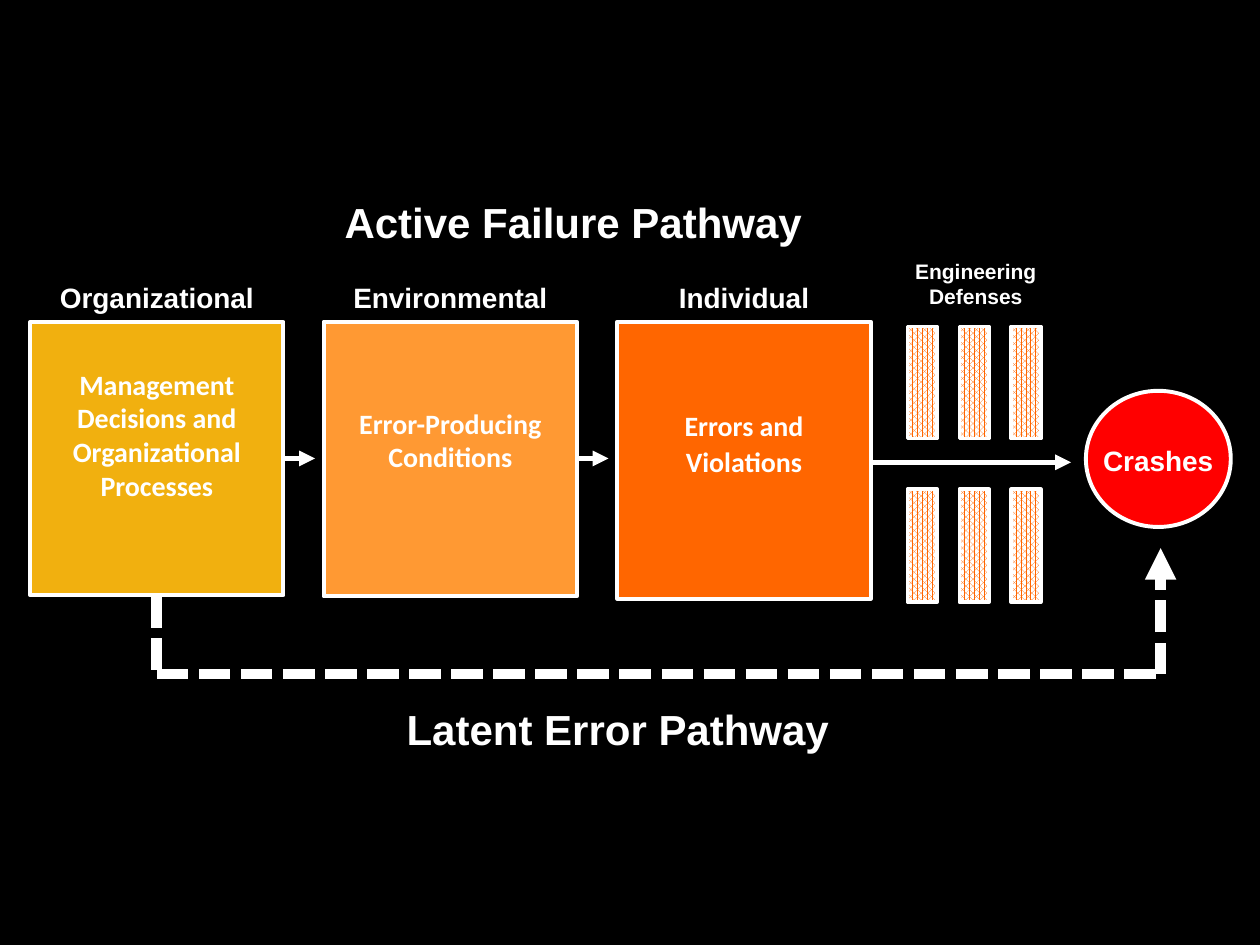
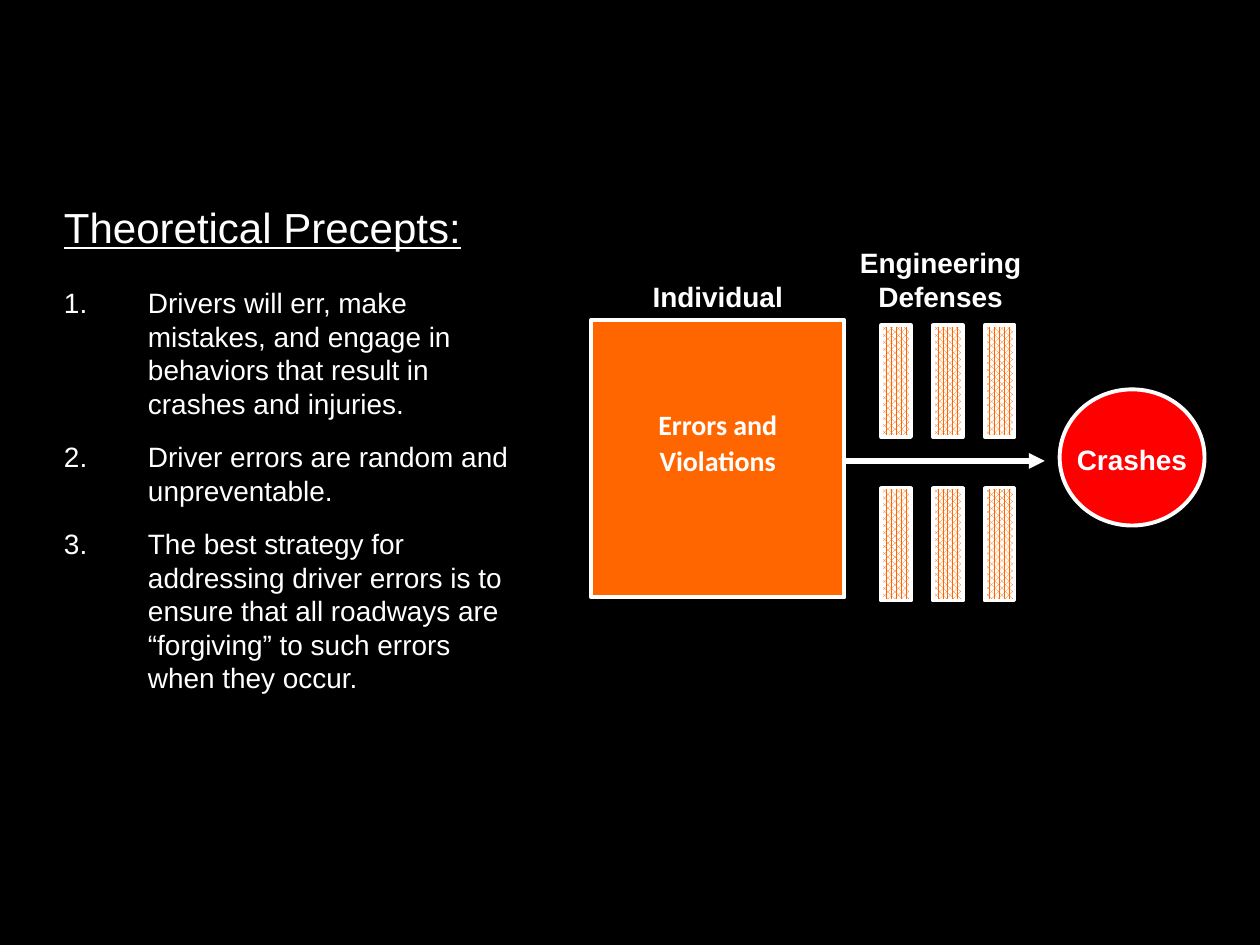
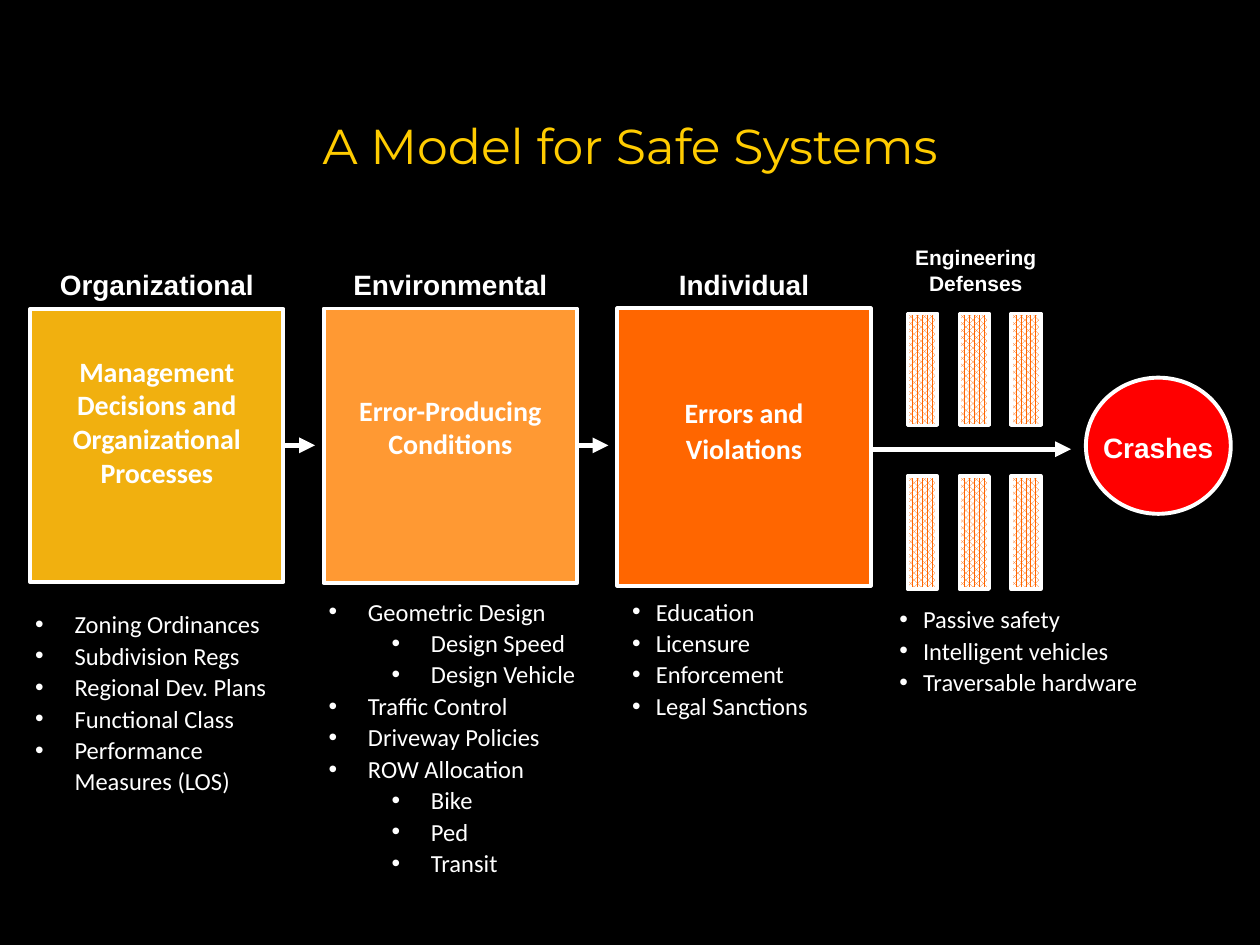
from lxml import etree
from pptx import Presentation
from pptx.dml.color import RGBColor
from pptx.enum.dml import MSO_LINE, MSO_PATTERN
from pptx.enum.shapes import MSO_CONNECTOR, MSO_SHAPE
from pptx.enum.text import MSO_ANCHOR, PP_ALIGN
from pptx.oxml.ns import qn
from pptx.util import Pt

RECT, OVAL = MSO_SHAPE.RECTANGLE, MSO_SHAPE.OVAL
LEFT, CENTER = PP_ALIGN.LEFT, PP_ALIGN.CENTER
TOP, MIDDLE = MSO_ANCHOR.TOP, MSO_ANCHOR.MIDDLE
STRAIGHT = MSO_CONNECTOR.STRAIGHT
DASH = MSO_LINE.SQUARE_DOT
WEAVE = MSO_PATTERN.PERCENT_75

COLORS = {
    "back": "000000", "white": "FFFFFF", "title": "FFCC00", "gold": "F1B00F",
    "amber": "FF9933", "orange": "FF6600", "red": "FF0000",
}
BOX_W = 144.7
# Label, text, colour, left, top, height, top inset, line spacing
STAGES = [
    ("Organizational", "Management Decisions and Organizational Processes",
     "gold", 17.3, 184, 156.2, 26, 1),
    ("Environmental", "Error-Producing Conditions",
     "amber", 185, 183.8, 157, 48.4, 1),
    ("Individual", "Errors and Violations",
     "orange", 352.8, 183.8, 158.4, 48.4, 1.07),
]
PRECEPTS = [
    "Drivers will err, make mistakes, and engage in behaviors that result in "
    "crashes and injuries.",
    "Driver errors are random and unpreventable.",
    "The best strategy for addressing driver errors is to ensure that all "
    "roadways are “forgiving” to such errors when they occur.",
]
# Left, top, width, height, indent, (level, text) items
LISTS = [
    (13, 343.4, 154.8, 212, 22.5,
     [(0, "Zoning Ordinances"), (0, "Subdivision Regs"),
      (0, "Regional Dev. Plans"), (0, "Functional Class"),
      (0, "Performance Measures (LOS)")]),
    (180.7, 336.2, 156.2, 94.3, 22.5,
     [(0, "Geometric Design"), (1, "Design Speed"), (1, "Design Vehicle"),
      (0, "Traffic Control"), (0, "Driveway Policies"),
      (0, "ROW Allocation"), (1, "Bike"), (1, "Ped"), (1, "Transit")]),
    (354.2, 336.2, 125.3, 94.3, 13.5,
     [(0, "Education"), (0, "Licensure"), (0, "Enforcement"),
      (0, "Legal Sanctions")]),
    (506.9, 340.6, 154, 195.8, 13.5,
     [(0, "Passive safety"), (0, "Intelligent vehicles"),
      (0, "Traversable hardware")]),
]


def rgb(name):
    return RGBColor.from_string(COLORS[name])


def style(para, size, font="Arial", color="white", bold=False, align=CENTER):
    para.alignment = align
    para.font.size = Pt(size)
    para.font.name = font
    para.font.bold = bold
    para.font.color.rgb = rgb(color)


def add_text(slide, area, items, anchor=TOP):
    """Add a text box and return its paragraphs, one for each item."""
    frame = slide.shapes.add_textbox(*map(Pt, area)).text_frame
    frame.word_wrap = True
    frame.vertical_anchor = anchor
    frame.text = "\n".join(items)
    return frame.paragraphs


def add_label(slide, area, text, size=16):
    style(add_text(slide, area, [text])[0], size, bold=True)


def add_form(slide, kind, area, color, weight=2.25):
    form = slide.shapes.add_shape(kind, *map(Pt, area))
    form.shadow.inherit = False
    form.fill.solid()
    form.fill.fore_color.rgb = rgb(color)
    form.line.color.rgb = rgb("white")
    form.line.width = Pt(weight)
    return form


def add_line(slide, start, end, weight=3, dash=None, arrow=True):
    line = slide.shapes.add_connector(STRAIGHT, *map(Pt, (*start, *end)))
    line.line.color.rgb = rgb("white")
    line.line.width = Pt(weight)
    if dash:
        line.line.dash_style = dash
    if arrow:
        tail = etree.SubElement(line.line._get_or_add_ln(), qn("a:tailEnd"))
        tail.set("type", "triangle")
    etree.SubElement(line._element.spPr, qn("a:effectLst"))


def add_mark(para, left, hang, tag, **attrs):
    """Give a paragraph a hanging indent and a bullet or number."""
    props = para._p.get_or_add_pPr()
    props.set("marL", str(Pt(left)))
    props.set("indent", str(-Pt(hang)))
    if tag == "a:buChar":
        etree.SubElement(props, qn("a:buFont")).set("typeface", "Arial")
    etree.SubElement(props, qn(tag), attrs)


def add_stage(slide, stage, dx, dy):
    label, text, color, left, top, height, inset, space = stage
    left, top = left + dx, top + dy
    frame = add_form(slide, RECT, (left, top, BOX_W, height), color).text_frame
    frame.word_wrap = True
    frame.vertical_anchor = TOP
    frame.margin_top = Pt(inset)
    frame.text = text
    para = frame.paragraphs[0]
    para.line_spacing = space
    style(para, 16, "Calibri", bold=True)
    add_label(slide, (left, 157 + dy, BOX_W, 26.6), label)


def add_flow(slide, stages, dx=0, dy=0):
    """Draw the stages, the gap between the defenses and the crashes."""
    for stage in stages:
        add_stage(slide, stage, dx, dy)
    for stage in stages[:-1]:
        x, y = stage[3] + BOX_W + dx, 262 + dy
        add_line(slide, (x, y), (x + 18, y))
    for top, height in ((186.6, 64), (279.5, 64.6)):
        for col in range(3):
            area = (518.6 + 29.6 * col + dx, top + dy, 17, height)
            bar = add_form(slide, RECT, area, "orange", 2)
            bar.fill.patterned()
            bar.fill.pattern = WEAVE
            bar.fill.fore_color.rgb = rgb("orange")
            bar.fill.back_color.rgb = rgb("white")
    add_line(slide, (497 + dx, 264.2 + dy), (612 + dx, 264.2 + dy))
    add_form(slide, OVAL, (620.5 + dx, 223.3 + dy, 82.8, 77.8), "red")
    add_label(slide, (620.8 + dx, 250 + dy, 82, 26.6), "Crashes")


def add_guard(slide, area, size):
    add_label(slide, area, "Engineering Defenses", size)


def add_slide(deck):
    slide = deck.slides.add_slide(deck.slide_layouts[6])
    slide.background.fill.solid()
    slide.background.fill.fore_color.rgb = rgb("back")
    return slide


def add_paths(deck):
    slide = add_slide(deck)
    add_flow(slide, STAGES)
    add_guard(slide, (512.6, 144, 90, 36), 12)
    route = [(89.6, 340.6), (89.6, 385.2), (663.2, 385.2), (663.2, 313.2)]
    for start, end in zip(route, route[1:]):
        add_line(slide, start, end, 6, DASH, arrow=end == route[-1])
    add_label(slide, (200, 398.2, 306, 36), "Latent Error Pathway", 24)
    add_label(slide, (180, 108.7, 295.2, 36), "Active Failure Pathway", 24)


def add_theory(deck):
    slide = add_slide(deck)
    head = add_text(slide, (29.5, 111.6, 288, 36), ["Theoretical Precepts:"])[0]
    style(head, 24, align=LEFT)
    head.font.underline = True
    for para in add_text(slide, (29.5, 159.8, 275.8, 247.7), PRECEPTS):
        add_mark(para, 48, 48, "a:buAutoNum", type="arabicPeriod")
        para.space_after = Pt(11.2)
        style(para, 16, align=LEFT)
    add_flow(slide, STAGES[-1:], -15, -0.8)
    add_guard(slide, (481, 136.8, 113, 46), 16)


def add_model(deck):
    slide = add_slide(deck)
    add_flow(slide, STAGES, dy=-7.5)
    add_guard(slide, (512.6, 136.4, 90, 36), 12)
    for *area, hang, items in LISTS:
        paras = add_text(slide, area, [text for _, text in items])
        for para, (level, _) in zip(paras, items):
            para.level = level
            add_mark(para, hang + 36 * level, hang, "a:buChar", char="•")
            para.line_spacing = 1.07
            style(para, 14, "Calibri", align=LEFT)
    title = add_text(slide, (0, 49.7, 720, 66.2),
                     ["A Model for Safe Systems"], MIDDLE)[0]
    style(title, 28, "Montserrat", "title")


def main():
    deck = Presentation()
    deck.slide_width, deck.slide_height = Pt(720), Pt(540)
    add_paths(deck)
    add_theory(deck)
    add_model(deck)
    deck.save("out.pptx")


if __name__ == "__main__":
    main()
